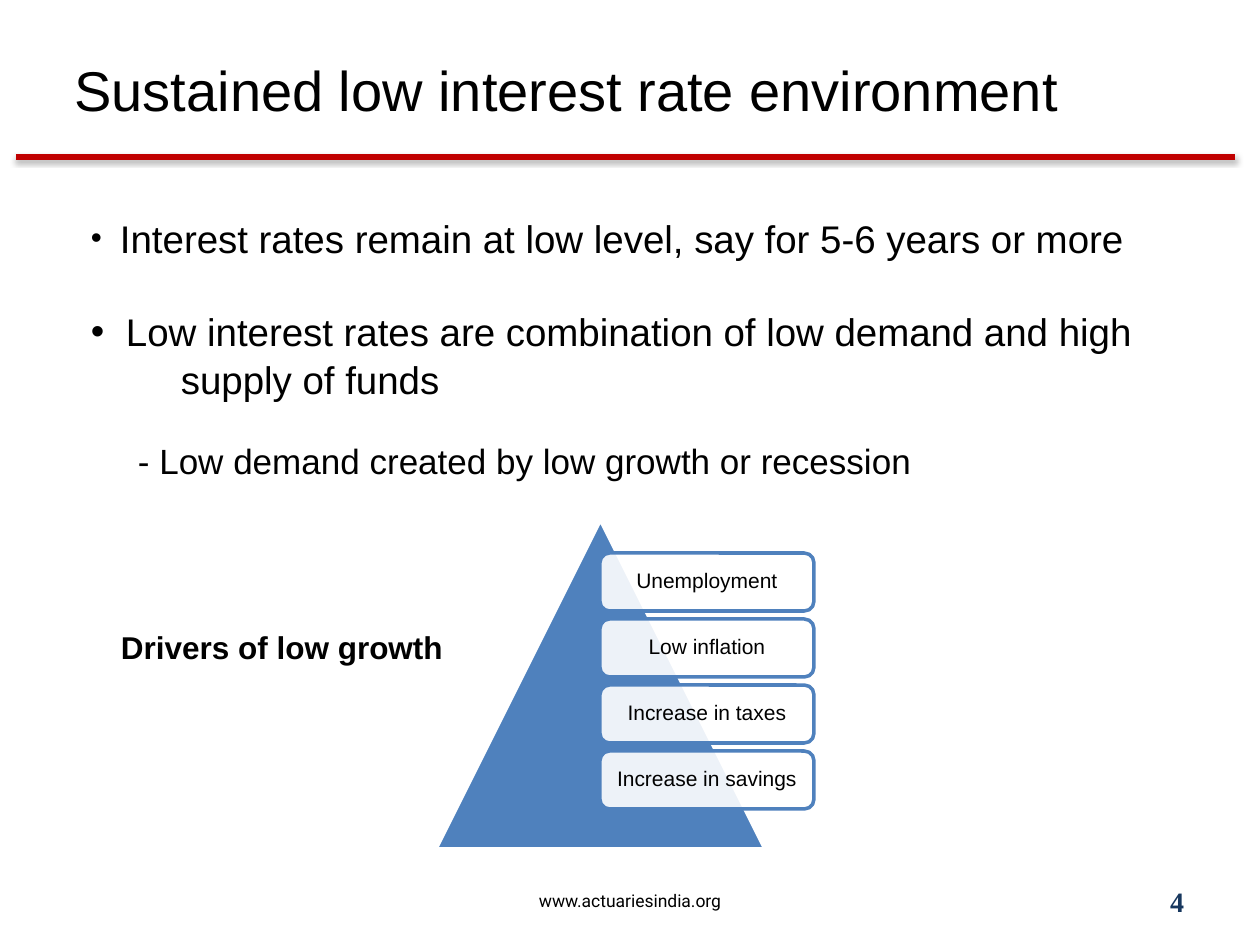
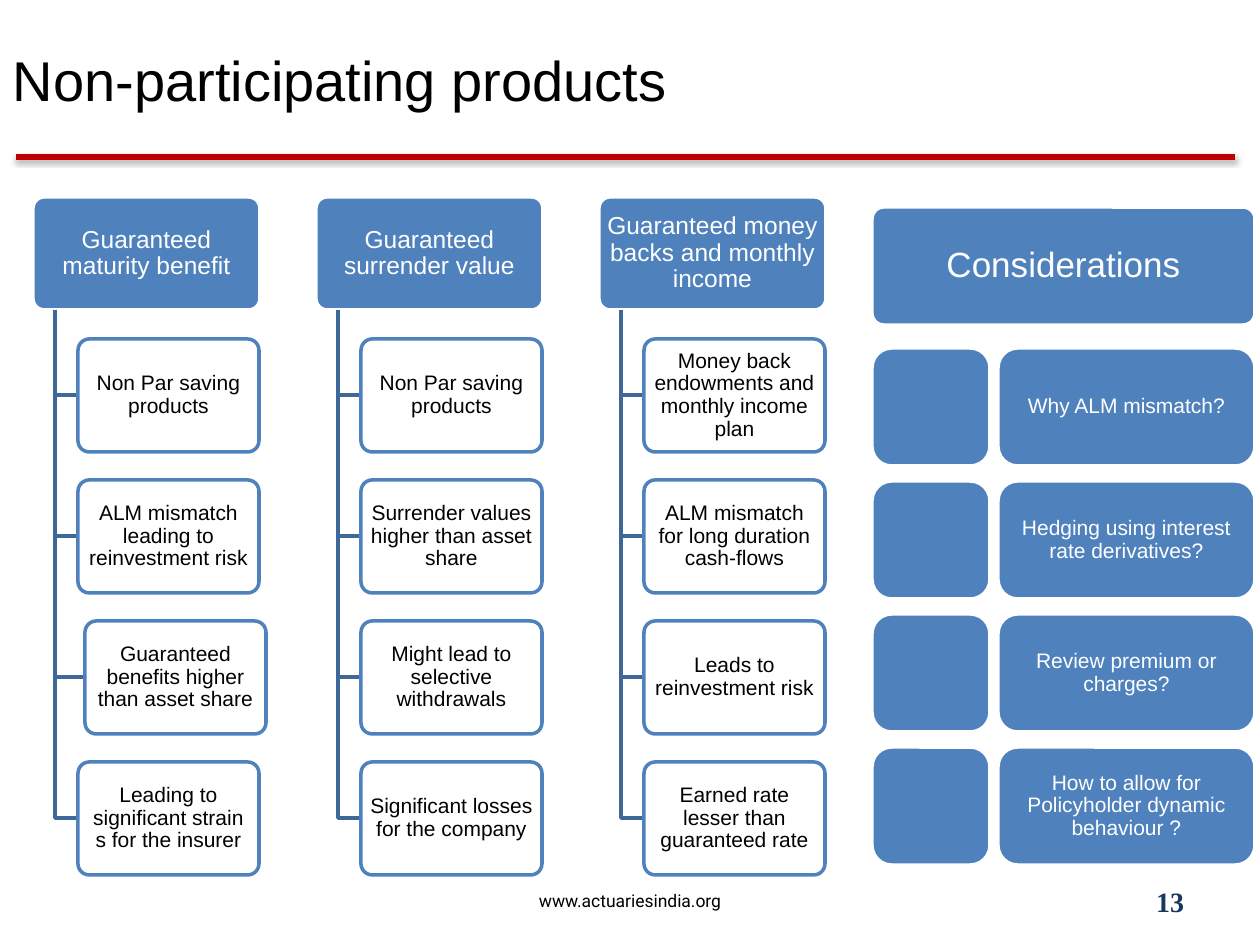
from dataclasses import dataclass

from lxml import etree
from pptx import Presentation, util as u
from pptx.dml.color import RGBColor
from pptx.enum import shapes as kinds, text as t
from pptx.oxml.ns import qn

# ---- Content ----
SITE = "www.actuariesindia.org"
RATES = {
    "title": "Sustained low interest rate environment",
    "page": "4",
    "points": [
        ("Interest rates remain at low level, say for 5-6 years or more",
         dict(bullet=82, hang=29)),
        ("Low interest rates are combination of low demand and high\v\tsupply of funds",
         dict(bullet=100, hang=35, tab=90, before=26)),
        ("- Low demand created by low growth or recession",
         dict(size="sub", left=47, before=20)),
    ],
    "caption": "Drivers of low growth",
    "drivers": ["Unemployment", "Low inflation", "Increase in taxes", "Increase in savings"],
}
PRODUCTS = {
    "title": "Non-participating products",
    "page": "13",
    "guarantees": [
        ("Guaranteed maturity benefit",
         ["Non Par saving products",
          "ALM mismatch leading to reinvestment risk",
          "Guaranteed benefits higher than asset share",
          "Leading to significant strain s for the insurer"]),
        ("Guaranteed surrender value",
         ["Non Par saving products",
          "Surrender values higher than asset share",
          "Might lead to selective withdrawals",
          "Significant losses for the company"]),
        ("Guaranteed money backs and monthly income",
         ["Money back endowments and monthly income plan",
          "ALM mismatch for long duration cash-flows",
          "Leads to reinvestment risk",
          "Earned rate lesser than guaranteed rate"]),
    ],
    "shifted": (0, 2),  # column and row of the box set further right
    "considerations": (
        "Considerations",
        ["Why ALM mismatch?",
         "Hedging using interest rate derivatives?",
         "Review premium or charges?",
         "How to allow for Policyholder dynamic behaviour ?"]),
}


# ---- Theme and scale ----
@dataclass(frozen=True)
class Theme:
    ink: str = "000000"
    paper: str = "FFFFFF"
    blue: str = "4F81BD"
    branch: str = "3F6797"
    rule: str = "C00000"
    navy: str = "17375E"
    face: str = "Arial"
    site_face: str = "Roboto"
    page_face: str = "Times New Roman"
    title: int = 32
    body: int = 22
    sub: int = 20
    caption: int = 18
    page: int = 16
    head: int = 14
    item: int = 12
    site: int = 10


THEME = Theme()
PX = 914400 / 126
TEXT_INSET = (13, 6)
ALIGN = {"l": t.PP_ALIGN.LEFT, "c": t.PP_ALIGN.CENTER, "r": t.PP_ALIGN.RIGHT}


def px(n):
    return u.Emu(round(n * PX))


def rgb(name):
    return RGBColor.from_string(getattr(THEME, name))


def sub(parent, tag, **attributes):
    return etree.SubElement(parent, qn(tag), {k: str(v) for k, v in attributes.items()})


# ---- Text ----
def write(paragraph, words, size="item", color="ink", face="face", bold=False, align="l",
          spacing=None, before=0, left=0, hang=0, tab=0, bullet=0):
    """Fill a paragraph; hang, left and tab are px, bullet is percent of the text size."""
    paragraph.text = words
    paragraph.alignment = ALIGN[align]
    if spacing:
        paragraph.line_spacing = spacing
    if before:
        paragraph.space_before = u.Pt(before)
    props = paragraph._p.get_or_add_pPr()
    props.set("marL", str(px(left + hang)))
    props.set("indent", str(px(-hang)))
    if bullet:
        sub(props, "a:buSzPct", val=bullet * 1000)
        sub(props, "a:buFont", typeface=THEME.face)
        sub(props, "a:buChar", char="•")
    if tab:
        sub(sub(props, "a:tabLst"), "a:tab", pos=px(tab), algn="l")
    for run in paragraph.runs:
        run.font.size = u.Pt(getattr(THEME, size))
        run.font.name = getattr(THEME, face)
        run.font.color.rgb = rgb(color)
        run.font.bold = bold


def prepare(frame, inset, middle=True):
    frame.word_wrap = True
    frame.margin_left = frame.margin_right = px(inset[0])
    frame.margin_top = frame.margin_bottom = px(inset[1])
    frame.vertical_anchor = t.MSO_ANCHOR.MIDDLE if middle else t.MSO_ANCHOR.TOP
    return frame


def label(slide, box, paragraphs, middle=True, **fmt):
    frame = prepare(slide.shapes.add_textbox(*map(px, box)).text_frame, TEXT_INSET, middle)
    for i, (words, own) in enumerate(paragraphs):
        paragraph = frame.add_paragraph() if i else frame.paragraphs[0]
        write(paragraph, words, **{**fmt, **own})


# ---- Shapes ----
def block(slide, box, words="", kind="ROUNDED_RECTANGLE", outlined=False,
          corner=None, inset=(4, 3), **fmt):
    """Solid blue with a white edge, or nearly opaque white with a blue edge."""
    shape = slide.shapes.add_shape(getattr(kinds.MSO_SHAPE, kind), *map(px, box))
    shape.shadow.inherit = False
    fill, edge, ink = ("paper", "blue", "ink") if outlined else ("blue", "paper", "paper")
    shape.fill.solid()
    shape.fill.fore_color.rgb = rgb(fill)
    if outlined:
        color = shape._element.spPr.find(qn("a:solidFill")).find(qn("a:srgbClr"))
        sub(color, "a:alpha", val=90000)
    shape.line.color.rgb = rgb(edge)
    shape.line.width = u.Pt(2)
    if corner:
        shape.adjustments[0] = corner
    if words:
        frame = prepare(shape.text_frame, inset)
        write(frame.paragraphs[0], words, color=ink, align="c", spacing=0.9, **fmt)


def branch(slide, x, top, end_x, end_y):
    outline = slide.shapes.build_freeform(x, top, scale=PX)
    outline.add_line_segments([(x, end_y), (end_x, end_y)], close=False)
    shape = outline.convert_to_shape()
    shape.shadow.inherit = False
    shape.fill.background()
    shape.line.color.rgb = rgb("branch")
    shape.line.width = u.Pt(2)


# ---- Shared frame ----
def framed_slide(deck, content, title_top, title_align):
    slide = deck.slides.add_slide(deck.slide_layouts[6])
    rule = slide.shapes.add_connector(kinds.MSO_CONNECTOR.STRAIGHT,
                                      px(16), px(157), px(1235), px(157))
    rule.line.color.rgb = rgb("rule")
    rule.line.width = u.Pt(3)
    shadow = sub(sub(rule._element.spPr, "a:effectLst"), "a:outerShdw", blurRad=40000,
                 dist=20000, dir=5400000, rotWithShape=0)
    sub(sub(shadow, "a:srgbClr", val=THEME.ink), "a:alpha", val=38000)
    label(slide, (0, title_top, 1134, 158), [(content["title"], {})],
          size="title", align=title_align)
    label(slide, (0, 876, 1260, 50), [(SITE, {})], size="site", face="site_face", align="c")
    label(slide, (903, 876, 294, 50), [(content["page"], {})], size="page",
          face="page_face", color="navy", bold=True, align="r")
    return slide


# ---- Slides ----
def rates_slide(deck):
    slide = framed_slide(deck, RATES, 10, "c")
    label(slide, (78, 207, 1082, 394), RATES["points"], middle=False,
          size="body", spacing=1.04)
    block(slide, (436, 520, 329, 329), kind="ISOSCELES_TRIANGLE")
    for i, driver in enumerate(RATES["drivers"]):
        block(slide, (600, 553 + 66 * i, 214, 58), driver, outlined=True, inset=(6, 6))
    label(slide, (108, 622, 354, 90), [(RATES["caption"], {})], middle=False,
          size="caption", bold=True)


def products_slide(deck):
    slide = framed_slide(deck, PRODUCTS, 0, "l")

    # Guarantee columns, each a header with branches to its effects
    top, height, first_row, row_step = 197, 113, 339, 141
    for col, (guarantee, effects) in enumerate(PRODUCTS["guarantees"]):
        x = 33 + 283 * col
        block(slide, (x, top, 227, height), guarantee, corner=0.1, size="head")
        for row, effect in enumerate(effects):
            effect_x = x + 45 + (7 if (col, row) == PRODUCTS["shifted"] else 0)
            y = first_row + row_step * row
            branch(slide, x + 22, top + height, effect_x, y + height // 2)
            block(slide, (effect_x, y, 181, height), effect, outlined=True, corner=0.1)

    # Considerations, each question beside an empty square
    heading, questions = PRODUCTS["considerations"]
    x, side, width = 872, 118, 383
    block(slide, (x, 207, width, side), heading, corner=0.1, size="sub")
    for row, question in enumerate(questions):
        y = 348 + 133 * row
        block(slide, (x, y, side, side))
        block(slide, (x + 126, y, width - 126, side), question, inset=(11, 11))


def main():
    deck = Presentation()
    deck.slide_width, deck.slide_height = px(1260), px(945)
    rates_slide(deck)
    products_slide(deck)
    deck.save("out.pptx")


if __name__ == "__main__":
    main()
